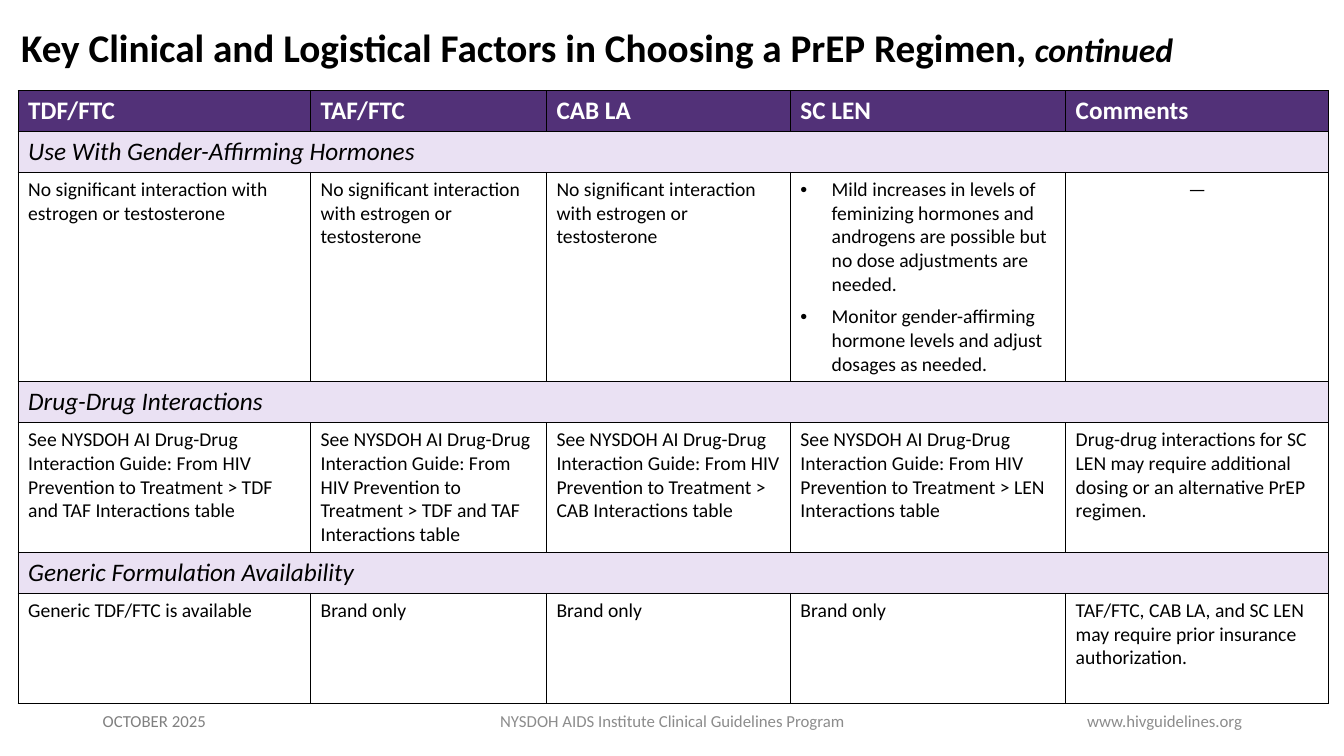
from dataclasses import dataclass

import pptx
import pptx.dml.color
import pptx.enum.text
import pptx.oxml
import pptx.oxml.ns
import pptx.util
from lxml import etree

Inches = pptx.util.Inches
Pt = pptx.util.Pt
RGBColor = pptx.dml.color.RGBColor
PP_ALIGN = pptx.enum.text.PP_ALIGN
MSO_ANCHOR = pptx.enum.text.MSO_ANCHOR
qn = pptx.oxml.ns.qn

FONT = "Calibri"
BLACK = RGBColor(0x00, 0x00, 0x00)
WHITE = RGBColor(0xFF, 0xFF, 0xFF)
PURPLE = RGBColor(0x52, 0x31, 0x78)
LILAC = RGBColor(0xEA, 0xE1, 0xF3)
GRAY = RGBColor(0x8C, 0x8C, 0x8C)
DARK_GRAY = RGBColor(0x80, 0x80, 0x80)


@dataclass
class Section:
    heading: str
    cells: list[str]
    height: float


@dataclass
class Footer:
    text: str
    left: float
    width: float
    align: PP_ALIGN
    color: RGBColor


COLUMNS = ["TDF/FTC", "TAF/FTC", "CAB LA", "SC LEN", "Comments"]
COLUMN_WIDTHS = [2.9, 2.34, 2.42, 2.73, 2.61]
BAND_HEIGHT = 0.4
NO_INTERACTION = "No significant interaction with estrogen or testosterone"
GUIDE = ("See NYSDOH AI Drug-Drug Interaction Guide: From HIV Prevention "
         "to Treatment > {} Interactions table")

# A cell with several lines becomes a bulleted list
SECTIONS = [
    Section("Use With Gender-Affirming Hormones", [
        *[NO_INTERACTION] * 3,
        "Mild increases in levels of feminizing hormones and androgens are "
        "possible but no dose adjustments are needed.\n"
        "Monitor gender-affirming hormone levels and adjust dosages as needed.",
        "—",
    ], 2.07),
    Section("Drug-Drug Interactions", [
        *[GUIDE.format(drug) for drug in ("TDF and TAF", "TDF and TAF", "CAB", "LEN")],
        "Drug-drug interactions for SC LEN may require additional dosing or "
        "an alternative PrEP regimen.",
    ], 1.29),
    Section("Generic Formulation Availability", [
        "Generic TDF/FTC is available",
        *["Brand only"] * 3,
        "TAF/FTC, CAB LA, and SC LEN may require prior insurance authorization.",
    ], 1.09),
]

FOOTERS = [
    Footer("NYSDOH AIDS Institute Clinical Guidelines Program", 4.42, 4.5,
           PP_ALIGN.CENTER, GRAY),
    Footer("www.hivguidelines.org", 9.42, 3, PP_ALIGN.RIGHT, GRAY),
    Footer("OCTOBER 2025", 0.92, 3, PP_ALIGN.LEFT, DARK_GRAY),
]


def style_run(r, size: float, color: RGBColor, bold: bool = False,
              italic: bool = False) -> None:
    r.font.name = FONT
    r.font.size = Pt(size)
    r.font.color.rgb = color
    r.font.bold = bold
    r.font.italic = italic


def add_bullet(p) -> None:
    pPr = p._p.get_or_add_pPr()
    pPr.set("marL", str(Inches(0.31)))
    pPr.set("indent", str(-Inches(0.31)))
    etree.SubElement(pPr, qn("a:buFont")).set("typeface", "Arial")
    etree.SubElement(pPr, qn("a:buChar")).set("char", "•")


def add_borders(cell) -> None:
    tcPr = cell._tc.get_or_add_tcPr()
    for side in ("lnL", "lnR", "lnT", "lnB"):
        ln = etree.SubElement(tcPr, qn(f"a:{side}"), w=str(Pt(1)))
        fill = etree.SubElement(ln, qn("a:solidFill"))
        etree.SubElement(fill, qn("a:srgbClr"), val=str(BLACK))


def fill_cell(cell, text: str, size: float, color: RGBColor = BLACK,
              bold: bool = False, italic: bool = False) -> None:
    tf = cell.text_frame
    tf.text = text
    for i, p in enumerate(tf.paragraphs):
        if len(tf.paragraphs) > 1:
            add_bullet(p)
        if i:
            p.space_before = Pt(6)
        if text == "—":
            p.alignment = PP_ALIGN.CENTER
        for r in p.runs:
            style_run(r, size, color, bold, italic)


def add_title(s) -> None:
    sp = s.shapes.title
    sp.left, sp.top = Inches(0.11), Inches(0)
    sp.width, sp.height = Inches(11.98), Inches(0.99)
    tf = sp.text_frame
    tf.word_wrap = True
    tf.vertical_anchor = MSO_ANCHOR.MIDDLE
    p = tf.paragraphs[0]
    p.text = "Key Clinical and Logistical Factors in Choosing a PrEP Regimen, "
    p.alignment = PP_ALIGN.LEFT
    p.line_spacing = 0.9
    style_run(p.runs[0], 28, BLACK, bold=True)
    r = p.add_run()
    r.text = "continued"
    style_run(r, 24, BLACK, bold=True, italic=True)


def add_factor_table(s) -> None:
    heights = [BAND_HEIGHT]
    for section in SECTIONS:
        heights += [BAND_HEIGHT, section.height]
    table = s.shapes.add_table(
        len(heights), len(COLUMNS), Inches(0.18), Inches(0.9),
        Inches(sum(COLUMN_WIDTHS)), Inches(sum(heights))).table
    table.first_row = table.horz_banding = False
    for column, width in zip(table.columns, COLUMN_WIDTHS):
        column.width = Inches(width)
    for row, height in zip(table.rows, heights):
        row.height = Inches(height)

    # Borders and fills: odd rows are section bands
    for i, row in enumerate(table.rows):
        for cell in row.cells:
            add_borders(cell)
            cell.fill.solid()
            cell.fill.fore_color.rgb = PURPLE if i == 0 else LILAC if i % 2 else WHITE

    # Text
    for j, name in enumerate(COLUMNS):
        fill_cell(table.cell(0, j), name, 18, WHITE, bold=True)
    for k, section in enumerate(SECTIONS):
        band = 2 * k + 1
        table.cell(band, 0).merge(table.cell(band, len(COLUMNS) - 1))
        fill_cell(table.cell(band, 0), section.heading, 18, italic=True)
        for j, text in enumerate(section.cells):
            fill_cell(table.cell(band + 1, j), text, 14)


def add_footer(s, footer: Footer) -> None:
    sp = s.shapes.add_textbox(Inches(footer.left), Inches(6.95),
                              Inches(footer.width), Inches(0.4))
    tf = sp.text_frame
    tf.word_wrap = True
    tf.vertical_anchor = MSO_ANCHOR.MIDDLE
    p = tf.paragraphs[0]
    p.text = footer.text
    p.alignment = footer.align
    style_run(p.runs[0], 12, footer.color)


def main() -> None:
    prs = pptx.Presentation()
    prs.slide_width, prs.slide_height = Inches(13.33), Inches(7.5)
    s = prs.slides.add_slide(prs.slide_layouts[5])
    add_title(s)
    add_factor_table(s)
    for footer in FOOTERS:
        add_footer(s, footer)
    prs.save("out.pptx")


if __name__ == "__main__":
    main()
